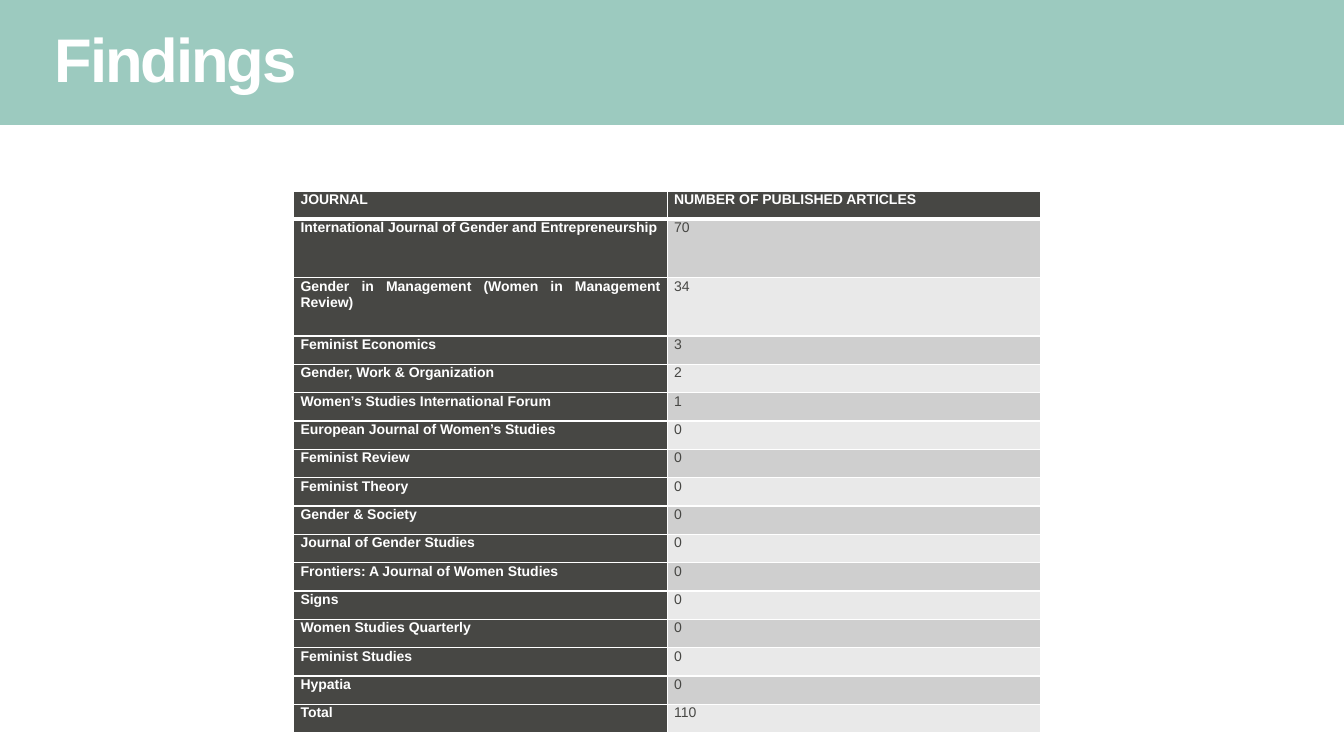
import pptx
import pptx.util
import pptx.dml.color
import pptx.enum.shapes
import pptx.enum.text
import pptx.oxml.ns
import lxml.etree

Pt = pptx.util.Pt
PP_ALIGN = pptx.enum.text.PP_ALIGN
ANCHOR = pptx.enum.text.MSO_ANCHOR

# Content
TITLE = "Findings"
HEADER = ("JOURNAL", "NUMBER OF PUBLISHED ARTICLES")
ARTICLES = [
    ("International Journal of Gender and Entrepreneurship", 70),
    ("Gender in Management (Women in Management Review)", 34),
    ("Feminist Economics", 3),
    ("Gender, Work & Organization", 2),
    ("Women’s Studies International Forum", 1),
    ("European Journal of Women’s Studies", 0),
    ("Feminist Review", 0),
    ("Feminist Theory", 0),
    ("Gender & Society", 0),
    ("Journal of Gender Studies", 0),
    ("Frontiers: A Journal of Women Studies", 0),
    ("Signs", 0),
    ("Women Studies Quarterly", 0),
    ("Feminist Studies", 0),
    ("Hypatia", 0),
    ("Total", 110),
]
TALL_ROWS = (1, 2)

# Sizes in points and colours
SLIDE_W, SLIDE_H, BAND_H = 960, 540, 89.3
TABLE_X, TABLE_Y, COL_W = 209.7, 136.4, 266.8
ROW_H, TALL_H = 20.24, 41.7
FONT = "Arial"
WHITE, DARK, TEAL = "FFFFFF", "474744", "9CCABF"
STRIPES = ("E9E9E9", "CFCFCF")


def rgb(value):
    return pptx.dml.color.RGBColor.from_string(value)


def set_font(p, size, color, bold):
    p.font.name, p.font.size, p.font.bold = FONT, Pt(size), bold
    p.font.color.rgb = rgb(color)


def add_border(cell, side, width):
    qn = pptx.oxml.ns.qn
    tc_pr = cell._tc.get_or_add_tcPr()
    ln = lxml.etree.SubElement(tc_pr, qn("a:" + side), w=str(Pt(width)))
    fill = lxml.etree.SubElement(ln, qn("a:solidFill"))
    lxml.etree.SubElement(fill, qn("a:srgbClr"), val=WHITE)


prs = pptx.Presentation()
prs.slide_width, prs.slide_height = Pt(SLIDE_W), Pt(SLIDE_H)
slide = prs.slides.add_slide(prs.slide_layouts[5])

# Title band, behind the title
band = slide.shapes.add_shape(pptx.enum.shapes.MSO_SHAPE.RECTANGLE,
                              0, 0, Pt(SLIDE_W), Pt(BAND_H))
band.shadow.inherit = False
band.fill.solid()
band.fill.fore_color.rgb = rgb(TEAL)
band.line.fill.background()
slide.shapes._spTree.insert(2, band._element)

# Title
title = slide.shapes.title
title.left, title.top, title.width, title.height = Pt(39), Pt(0), Pt(898), Pt(BAND_H)
tf = title.text_frame
tf.margin_left = tf.margin_right = tf.margin_top = tf.margin_bottom = 0
tf.vertical_anchor = ANCHOR.MIDDLE
p = tf.paragraphs[0]
p.alignment, p.line_spacing = PP_ALIGN.LEFT, 0.9
set_font(p, 44, WHITE, True)
r = p.add_run()
r.text = TITLE
r._r.get_or_add_rPr().set("spc", "-150")

# Table of journals
rows = [HEADER] + ARTICLES
heights = [TALL_H if i in TALL_ROWS else ROW_H for i in range(len(rows))]
table = slide.shapes.add_table(len(rows), 2, Pt(TABLE_X), Pt(TABLE_Y),
                               Pt(2 * COL_W), Pt(sum(heights))).table
table.first_row = table.horz_banding = False
for column in table.columns:
    column.width = Pt(COL_W)

for i, row in enumerate(rows):
    table.rows[i].height = Pt(heights[i])
    for j, value in enumerate(row):
        cell = table.cell(i, j)
        is_heading = i == 0 or j == 0
        cell.margin_left = cell.margin_right = Pt(5)
        cell.margin_top = cell.margin_bottom = 0
        cell.vertical_anchor = ANCHOR.TOP
        for side in ("lnL", "lnR", "lnT", "lnB"):
            under_header = (i, side) in ((0, "lnB"), (1, "lnT"))
            add_border(cell, side, 3 if under_header else 1)
        cell.fill.solid()
        cell.fill.fore_color.rgb = rgb(DARK if is_heading else STRIPES[i % 2])
        p = cell.text_frame.paragraphs[0]
        p.text = str(value)
        p.alignment, p.line_spacing, p.space_after = PP_ALIGN.JUSTIFY, 1.06, Pt(8)
        set_font(p, 10, WHITE if is_heading else DARK, is_heading)

prs.save("out.pptx")
